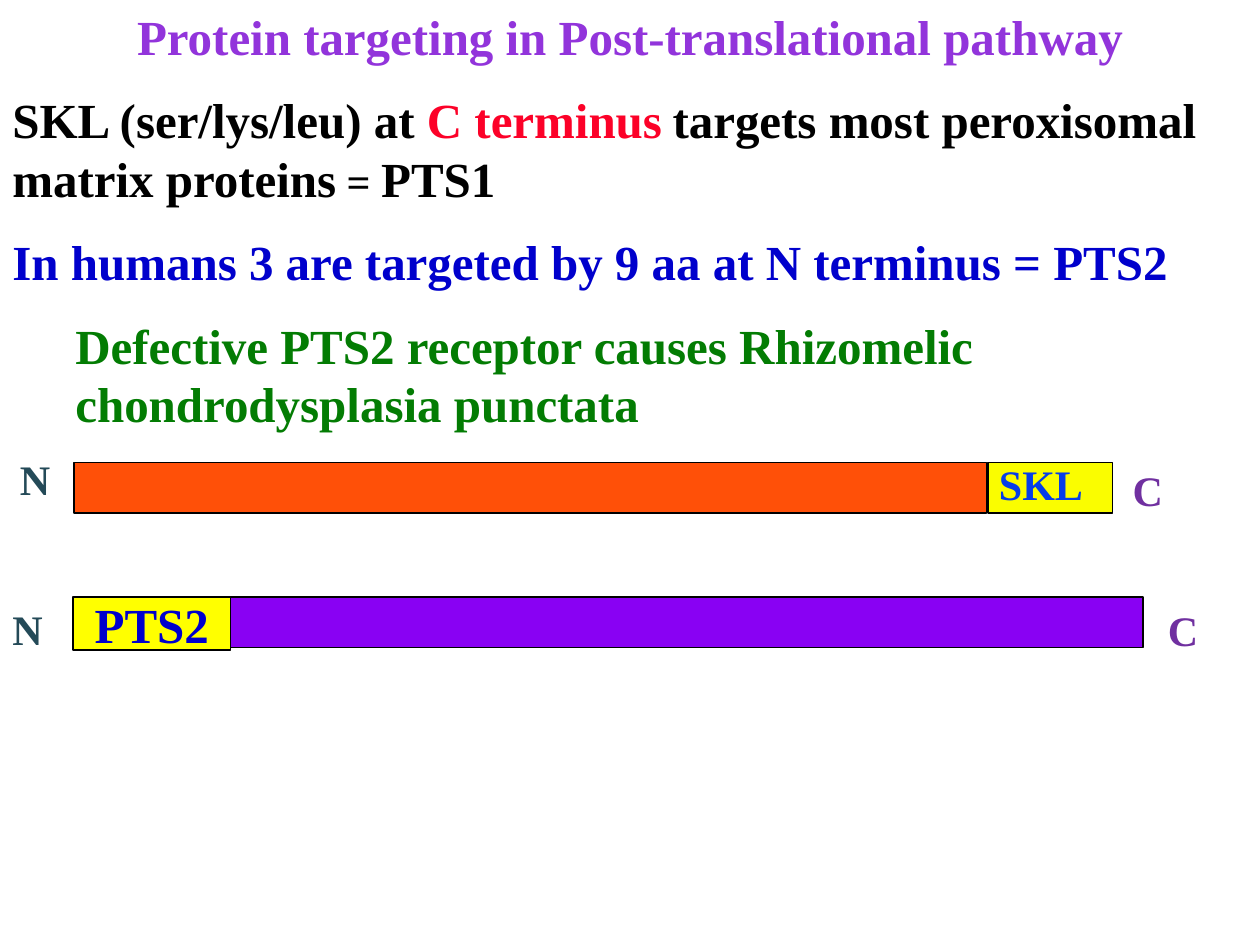
from pptx import Presentation
from pptx.dml.color import RGBColor
from pptx.enum.shapes import MSO_SHAPE
from pptx.enum.text import MSO_ANCHOR, MSO_AUTO_SIZE, PP_ALIGN
from pptx.util import Inches, Pt

FONT = "Times New Roman"
COLORS = {
    "title": "9234DB", "black": "000000", "red": "FC0128", "blue": "0000CC",
    "green": "037C03", "n_end": "244A58", "c_end": "7030A0", "skl": "063DE8",
    "pts1_protein": "FF5008", "skl_fill": "FAFD00",
    "pts2_protein": "8901F3", "pts2_fill": "FFFF00",
}
# Each paragraph is a list of (text, size, colour)
STATEMENTS = [
    [("Protein targeting in Post-translational pathway", 28, "title")],
    [("SKL (ser/lys/leu) at ", 28, "black"), ("C terminus", 28, "red"),
     (" ", 24, "red"), ("targets most peroxisomal matrix proteins", 28, "black"),
     (" = ", 24, "black"), ("PTS1", 28, "black")],
    [("In humans 3 are targeted by 9 aa at N terminus = PTS2", 28, "blue")],
    [("Defective PTS2 receptor causes Rhizomelic chondrodysplasia punctata",
      28, "green")],
]
PROTEIN_WIDTH, BAR_HEIGHT = 7.24, 0.4


def rgb(name):
    return RGBColor.from_string(COLORS[name])


def style_run(run, size, color):
    run.font.name = FONT
    run.font.size = Pt(size)
    run.font.bold = True
    run.font.color.rgb = rgb(color)


def add_text_frame(slide, left, top, width, height, wrap):
    box = slide.shapes.add_textbox(
        Inches(left), Inches(top), Inches(width), Inches(height))
    frame = box.text_frame
    frame.word_wrap = wrap
    frame.auto_size = MSO_AUTO_SIZE.SHAPE_TO_FIT_TEXT
    return frame


def add_statements(slide):
    frame = add_text_frame(slide, 0, 0, 10, 3.13, True)
    for index, pieces in enumerate(STATEMENTS):
        paragraph = frame.paragraphs[0] if index == 0 else frame.add_paragraph()
        if index:
            paragraph.space_before = Pt(14)
        for text, size, color in pieces:
            run = paragraph.add_run()
            run.text = text
            style_run(run, size, color)
    frame.paragraphs[0].alignment = PP_ALIGN.CENTER

    # The consequence is indented one level
    consequence = frame.paragraphs[-1]
    consequence.level = 1
    properties = consequence._p.get_or_add_pPr()
    properties.set("marL", str(Inches(0.5)))
    properties.set("indent", "0")


def add_label(slide, text, left, top, color, width=0.44, wrap=False):
    frame = add_text_frame(slide, left, top, width, 0.5, wrap)
    frame.text = text
    style_run(frame.paragraphs[0].runs[0], 24, color)


def add_bar(slide, left, top, width, fill, height=BAR_HEIGHT):
    bar = slide.shapes.add_shape(
        MSO_SHAPE.RECTANGLE,
        Inches(left), Inches(top), Inches(width), Inches(height))
    bar.shadow.inherit = False
    bar.fill.solid()
    bar.fill.fore_color.rgb = rgb(fill)
    bar.line.color.rgb = rgb("black")
    bar.line.width = Pt(1)
    return bar


def add_pts1_protein(slide):
    top = 3.67
    add_bar(slide, 0.59, top, PROTEIN_WIDTH, "pts1_protein")
    add_label(slide, "N", 0.06, 3.55, "n_end")
    add_bar(slide, 7.84, top, 0.99, "skl_fill")
    add_label(slide, "C", 8.89, 3.64, "c_end")
    add_label(slide, "SKL", 7.83, 3.59, "skl", width=1.09, wrap=True)


def add_pts2_protein(slide):
    left, top, signal_width = 0.58, 4.74, 1.25
    add_bar(slide, left + signal_width, top, PROTEIN_WIDTH, "pts2_protein")
    add_label(slide, "N", 0, top, "n_end")
    add_label(slide, "C", 9.17, 4.75, "c_end")
    signal = add_bar(slide, left, top, signal_width, "pts2_fill", height=0.42)
    frame = signal.text_frame
    frame.word_wrap = False
    frame.vertical_anchor = MSO_ANCHOR.MIDDLE
    frame.text = "PTS2"
    frame.paragraphs[0].alignment = PP_ALIGN.CENTER
    style_run(frame.paragraphs[0].runs[0], 28, "blue")


def main():
    presentation = Presentation()
    presentation.slide_width = Inches(10)
    presentation.slide_height = Inches(7.5)
    slide = presentation.slides.add_slide(presentation.slide_layouts[6])

    # Title and statements
    add_statements(slide)
    # Proteins with their targeting signals
    add_pts1_protein(slide)
    add_pts2_protein(slide)

    presentation.save("out.pptx")


if __name__ == "__main__":
    main()
